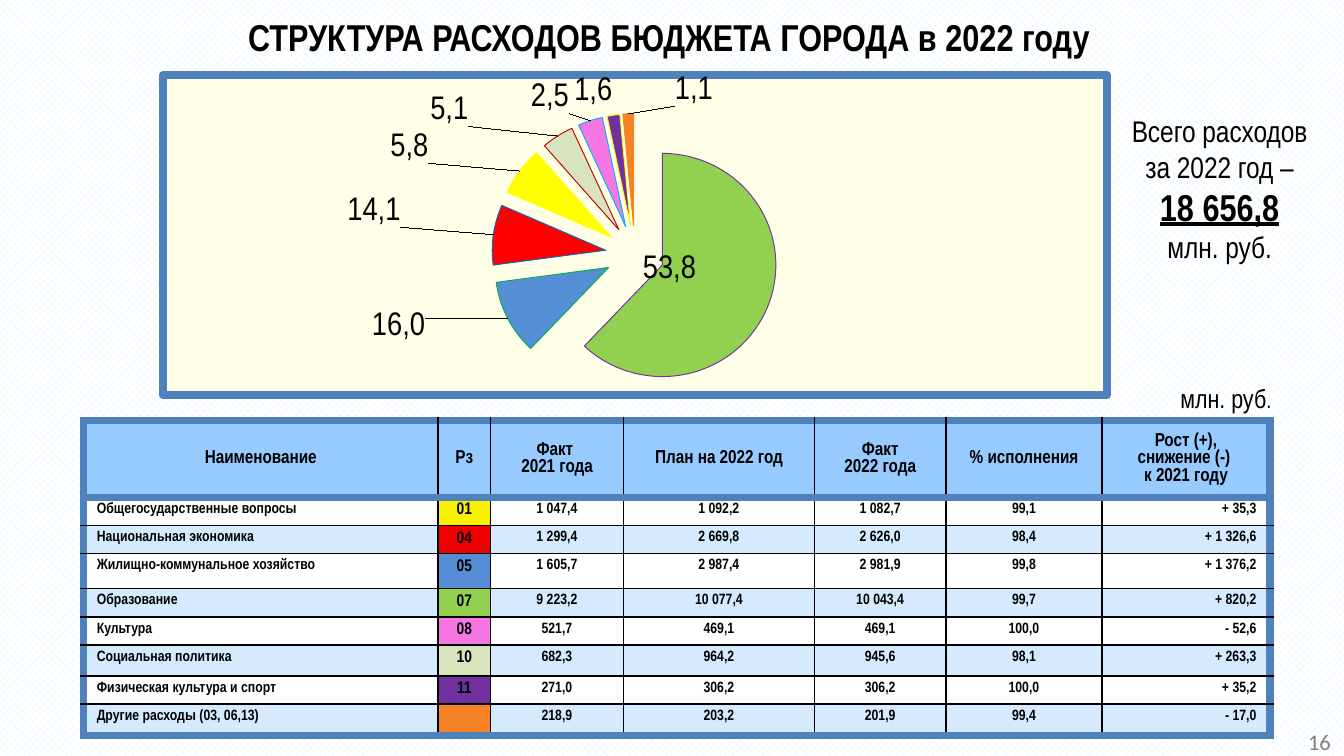
from lxml.etree import SubElement
from pptx import Presentation
from pptx.chart.data import CategoryChartData
from pptx.dml.color import RGBColor
from pptx.enum.chart import XL_CHART_TYPE, XL_LABEL_POSITION as LABEL_AT
from pptx.enum.dml import MSO_PATTERN
from pptx.enum.text import MSO_ANCHOR, PP_ALIGN
from pptx.oxml import parse_xml
from pptx.oxml.ns import nsdecls, qn
from pptx.util import Inches, Pt

COLORS = {
    "black": "000000", "white": "FFFFFF", "gray": "808080", "sky": "E1F4FF",
    "cream": "FFFFE7", "frame": "4F81BD", "header": "97CBFF", "band": "D5EAFF",
    "green": "92D050", "blue": "558ED5", "red": "FF0000", "yellow": "FFFF00",
    "sage": "D7E4BD", "pink": "F676E4", "purple": "7030A0", "orange": "F68426",
    "table yellow": "F8F200", "table red": "EE0000", "dark green": "00B050",
    "dark blue": "0070C0", "dark red": "C00000", "cyan": "00B0F0",
}
NARROW = "Arial Narrow"
CENTER, LEFT, RIGHT = PP_ALIGN.CENTER, PP_ALIGN.LEFT, PP_ALIGN.RIGHT

# label, fill, outline, label shift as a share of the chart size
SLICES = [
    ("53,8", "green", "purple", (-0.14, -0.17)),
    ("16,0", "blue", "dark green", (-0.08, -0.03)),
    ("14,1", "red", "dark blue", (-0.09, -0.02)),
    ("5,8", "yellow", "yellow", (-0.09, -0.01)),
    ("5,1", "sage", "dark red", (-0.09, -0.01)),
    ("2,5", "pink", "cyan", (-0.02, 0)),
    ("1,6", "purple", "yellow", None),
    ("1,1", "orange", "orange", (0.07, 0)),
]
SERIES = {
    "Series 1": [62, 10.8, 8.7, 7, 4.6, 3.5, 1.8, 1.5],
    "Series 2": [62, 11, 9, 7, 5, 4, 2, 1],
    "Series 3": [12] * 8,
}
EXPLOSIONS = [26, 25, 25]

COLUMN_WIDTHS = [2.64, 0.39, 0.99, 1.42, 0.98, 1.16, 1.25]
ROW_HEIGHTS = [0.57, 0.21, 0.21, 0.26, 0.21, 0.21, 0.23, 0.21, 0.21]
ALIGNMENTS = [LEFT] + [CENTER] * 5 + [RIGHT]
HEADER = ["Наименование", "Рз", "Факт \n2021 года", "План на 2022 год",
          "Факт\n 2022 года ", "% исполнения", "Рост (+),\nснижение (-) \nк 2021 году"]
EXPENSES = [
    ["Общегосударственные вопросы", "01", "1 047,4", "1 092,2", "1 082,7", "99,1", "+ 35,3"],
    ["Национальная экономика", "04", "1 299,4", "2 669,8", "2 626,0", "98,4", "+ 1 326,6"],
    ["Жилищно-коммунальное хозяйство", "05", "1 605,7", "2 987,4", "2 981,9", "99,8", "+ 1 376,2"],
    ["Образование", "07", "9 223,2", "10 077,4", "10 043,4", "99,7", "+ 820,2"],
    ["Культура", "08", "521,7", "469,1", "469,1", "100,0", "- 52,6"],
    ["Социальная политика", "10", "682,3", "964,2", "945,6", "98,1", "+ 263,3"],
    ["Физическая культура и спорт", "11", "271,0", "306,2", "306,2", "100,0", "+ 35,2"],
    ["Другие расходы (03, 06,13)", "", "218,9", "203,2", "201,9", "99,4", "- 17,0"],
]
SECTION_COLORS = ["table yellow", "table red", "blue", "green",
                  "pink", "sage", "purple", "orange"]


def rgb(name):
    return RGBColor.from_string(COLORS[name])


def format_font(font, size, color="black", **values):
    font.color.rgb = rgb(color)
    for name, value in {"name": NARROW, "size": Pt(size), **values}.items():
        setattr(font, name, value)


def write(frame, lines, align):
    """Fill a frame; each line is a list of (text, font values) spans."""
    for index, spans in enumerate(lines):
        para = frame.paragraphs[0] if index == 0 else frame.add_paragraph()
        para.alignment = align
        for text, values in spans:
            span = para.add_run()
            span.text = text
            format_font(span.font, **values)


def add_text(page, place, lines, align, bottom=0.05):
    box = page.shapes.add_textbox(*map(Inches, place))
    frame = box.text_frame
    frame.word_wrap = True
    frame.vertical_anchor = MSO_ANCHOR.MIDDLE
    frame.margin_bottom = Inches(bottom)
    write(frame, lines, align)


def add_title(page, text):
    title = page.shapes.title
    title.left, title.top, title.width, title.height = map(Inches, (0.12, 0.15, 9.78, 0.24))
    title.text_frame.vertical_anchor = MSO_ANCHOR.MIDDLE
    write(title.text_frame, [[(text, {"size": 20, "bold": True})]], CENTER)


def manual_layout(**values):
    items = "".join(f'<c:{tag} val="{value}"/>' for tag, value in values.items())
    return parse_xml(f'<c:layout {nsdecls("c")}><c:manualLayout>{items}'
                     '</c:manualLayout></c:layout>')


def frame_chart(chart):
    """Give the chart area its fill and border, and the plot its place."""
    area = chart.element.find(qn("c:chart"))
    area.addnext(parse_xml(
        f'<c:spPr {nsdecls("c", "a")}>'
        f'<a:solidFill><a:srgbClr val="{COLORS["cream"]}"/></a:solidFill>'
        f'<a:ln w="{Pt(4.5)}"><a:solidFill><a:srgbClr val="{COLORS["frame"]}"/>'
        '</a:solidFill><a:round/></a:ln></c:spPr>'))
    plot_area = area.find(qn("c:plotArea"))
    for old in plot_area.findall(qn("c:layout")):
        plot_area.remove(old)
    plot_area.insert(0, manual_layout(layoutTarget="inner", xMode="edge", yMode="edge",
                                      x=0, y=0.12, w=1, h=0.88))


def explode(series, percent):
    explosion = parse_xml(f'<c:explosion {nsdecls("c")} val="{percent}"/>')
    series._element.find(qn("c:tx")).addnext(explosion)


def add_pie(page):
    data = CategoryChartData(number_format="0.0")
    data.categories = [str(number) for number in range(1, len(SLICES) + 1)]
    for name, values in SERIES.items():
        data.add_series(name, values)
    place = map(Inches, (1.18, 0.53, 7.09, 2.44))
    chart = page.shapes.add_chart(XL_CHART_TYPE.PIE, *place, data).chart
    chart.replace_data(data)  # a new pie holds only the first series
    chart.has_legend = chart.has_title = False
    frame_chart(chart)
    format_font(chart.font, 18, name="Calibri")
    chart.plots[0].vary_by_categories = True
    for series, percent in zip(chart.plots[0].series, EXPLOSIONS):
        explode(series, percent)
    series = chart.plots[0].series[0]
    labels = series.data_labels
    labels.show_value = True
    format_font(labels.font, 18, bold=False)
    for index, (text, fill, outline, shift) in enumerate(SLICES):
        point = series.points[index]
        point.format.fill.solid()
        point.format.fill.fore_color.rgb = rgb(fill)
        point.format.line.color.rgb = rgb(outline)
        point.format.line.width = Pt(0.5)
        label = point.data_label
        write(label.text_frame, [[(text, {"size": 18, "bold": False})]], CENTER)
        label.position = LABEL_AT.OUTSIDE_END if index else LABEL_AT.BEST_FIT
        if shift:
            entry = series._element.find(qn("c:dLbls")).findall(qn("c:dLbl"))[index]
            entry.find(qn("c:idx")).addnext(manual_layout(x=shift[0], y=shift[1]))


def set_borders(cell, thick_sides):
    props = cell._tc.get_or_add_tcPr()
    for side in "LRTB":
        color, width = ("frame", 4.5) if side in thick_sides else ("black", 1)
        line = SubElement(props, qn(f"a:ln{side}"), w=str(Pt(width)))
        fill = SubElement(line, qn("a:solidFill"))
        SubElement(fill, qn("a:srgbClr"), val=COLORS[color])


def fill_cell(cell, text, size, align, fill):
    cell.fill.solid()
    cell.fill.fore_color.rgb = rgb(fill)
    cell.margin_top = cell.margin_bottom = Inches(0.04)
    if text:
        lines = [[(line, {"size": size, "bold": True})] for line in text.split("\n")]
        write(cell.text_frame, lines, align)
    else:
        SubElement(cell.text_frame.paragraphs[0]._p, qn("a:endParaRPr"), sz=str(size * 100))


def add_expense_table(page):
    rows = [HEADER] + EXPENSES
    last_row, last_column = len(rows) - 1, len(HEADER) - 1
    place = map(Inches, (0.62, 3.13, sum(COLUMN_WIDTHS), sum(ROW_HEIGHTS)))
    table = page.shapes.add_table(len(rows), len(HEADER), *place).table
    table.first_row = table.horz_banding = False
    for column, width in zip(table.columns, COLUMN_WIDTHS):
        column.width = Inches(width)
    for r, texts in enumerate(rows):
        table.rows[r].height = Inches(ROW_HEIGHTS[r])
        for c, text in enumerate(texts):
            cell = table.cell(r, c)
            sides = {"L": c == 0, "R": c == last_column,
                     "T": r <= 1, "B": r in (0, last_row)}
            set_borders(cell, [side for side, thick in sides.items() if thick])
            if r == 0:
                fill_cell(cell, text, 10, CENTER, "header")
                cell.vertical_anchor = MSO_ANCHOR.MIDDLE
            elif c == 1:
                fill_cell(cell, text, 9, CENTER, SECTION_COLORS[r - 1])
            else:
                fill_cell(cell, text, 8, ALIGNMENTS[c], "white" if r % 2 else "band")


def main():
    deck = Presentation()
    deck.slide_width, deck.slide_height = Inches(10), Inches(10) * 9 // 16
    page = deck.slides.add_slide(deck.slide_layouts[5])
    backdrop = page.background.fill
    backdrop.patterned()
    backdrop.pattern = MSO_PATTERN.LARGE_CHECKER_BOARD
    backdrop.fore_color.rgb, backdrop.back_color.rgb = rgb("sky"), rgb("white")

    add_title(page, "СТРУКТУРА РАСХОДОВ БЮДЖЕТА ГОРОДА в 2022 году ")
    add_pie(page)
    add_expense_table(page)
    add_text(page, (8.46, 2.81, 1.1, 0.31),
             [[("млн. руб", {"size": 14}), (".", {"size": 12})]], RIGHT)
    add_text(page, (8.26, 0.69, 1.63, 1.65),
             [[("Всего расходов за 2022 год –", {"size": 16})],
              [("18 656,8", {"size": 20, "bold": True, "underline": True})],
              [("млн. руб.", {"size": 16})]], CENTER, bottom=0.27)
    add_text(page, (9.53, 5.41, 0.47, 0.22),
             [[("16", {"size": 12, "color": "gray", "name": "Calibri"})]], RIGHT)
    deck.save("out.pptx")


if __name__ == "__main__":
    main()
